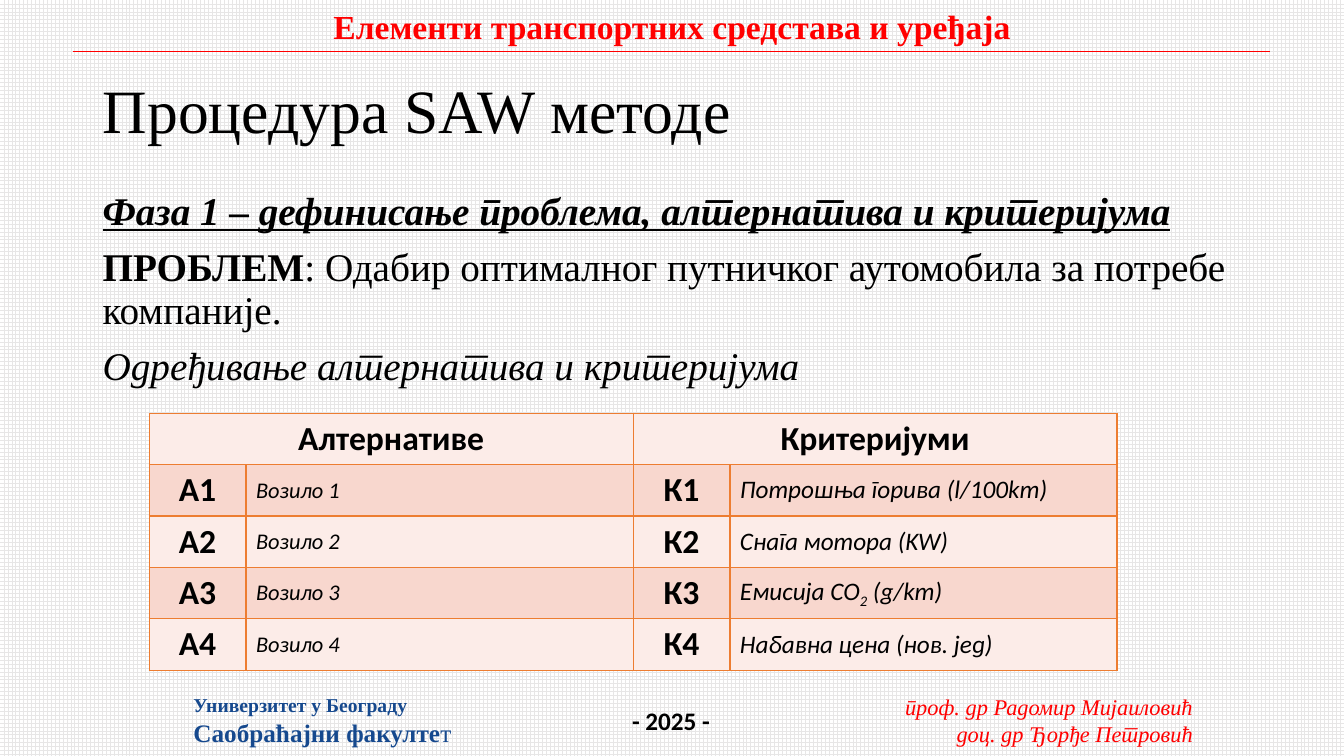
import pptx
import pptx.dml.color
import pptx.enum.dml
import pptx.enum.shapes
import pptx.enum.text
import pptx.oxml
import pptx.oxml.ns
import pptx.util
from dataclasses import dataclass
from lxml import etree

Inches = pptx.util.Inches
Pt = pptx.util.Pt
ALIGN = pptx.enum.text.PP_ALIGN
ANCHOR = pptx.enum.text.MSO_ANCHOR
AUTO = pptx.enum.text.MSO_AUTO_SIZE
qn = pptx.oxml.ns.qn


@dataclass(frozen=True)
class Theme:
    serif: str = "Times New Roman"
    sans: str = "Calibri"
    language: str = "sr-Cyrl-RS"
    black: str = "000000"
    white: str = "FFFFFF"
    red: str = "FF0000"
    navy: str = "16498E"
    grid: str = "E7E6E6"
    border: str = "ED7D31"
    light_row: str = "FCECE8"
    dark_row: str = "F8D7CE"
    title: int = 44
    body: int = 28
    heading: int = 24
    label: int = 18
    note: int = 16
    small: int = 14


def rgb(value):
    return pptx.dml.color.RGBColor.from_string(value)


class Deck:
    def __init__(self, theme):
        self.theme = theme
        self.prs = pptx.Presentation()
        self.prs.slide_width, self.prs.slide_height = Inches(13.33), Inches(7.5)

    def add_slide(self):
        self.s = self.prs.slides.add_slide(self.prs.slide_layouts[5])
        fill = self.s.background.fill
        fill.patterned()
        fill.pattern = pptx.enum.dml.MSO_PATTERN.LARGE_GRID
        fill.fore_color.rgb = rgb(self.theme.grid)
        fill.back_color.rgb = rgb(self.theme.white)

    def add_runs(self, p, runs, font, color, align=ALIGN.LEFT):
        """Fill a paragraph from (text, size, styles) runs; styles holds letters b, i, u, or _ for subscript."""
        p.alignment = align
        for text, size, styles in runs:
            r = p.add_run()
            r.text = text
            r.font.name, r.font.size = font, Pt(size)
            r.font.color.rgb = rgb(color)
            r.font.bold, r.font.italic = "b" in styles, "i" in styles
            r.font.underline = "u" in styles
            rPr = r._r.get_or_add_rPr()
            rPr.set("lang", self.theme.language)
            if "_" in styles:
                rPr.set("baseline", "-25000")

    def title(self, text, box):
        sp = self.s.shapes.title
        sp.left, sp.top, sp.width, sp.height = map(Inches, box)
        tf = sp.text_frame
        tf.auto_size, tf.vertical_anchor = AUTO.NONE, ANCHOR.MIDDLE
        p = tf.paragraphs[0]
        p.line_spacing = 0.9
        self.add_runs(p, [(text, self.theme.title, "")], self.theme.serif, self.theme.black)

    def text(self, box, paragraphs, color, font=None, align=ALIGN.LEFT,
             wrap=False, line_spacing=None, space_before=0):
        tf = self.s.shapes.add_textbox(*map(Inches, box)).text_frame
        tf.word_wrap = wrap
        tf.auto_size = AUTO.NONE if wrap else AUTO.SHAPE_TO_FIT_TEXT
        for i, runs in enumerate(paragraphs):
            p = tf.add_paragraph() if i else tf.paragraphs[0]
            if line_spacing:
                p.line_spacing = line_spacing
            if i and space_before:
                p.space_before = Pt(space_before)
            self.add_runs(p, runs, font or self.theme.serif, color, align)

    def rule(self, x1, x2, y, color, width):
        line = self.s.shapes.add_connector(
            pptx.enum.shapes.MSO_CONNECTOR.STRAIGHT, Inches(x1), Inches(y), Inches(x2), Inches(y))
        line.line.color.rgb, line.line.width = rgb(color), Pt(width)
        etree.SubElement(line._element.spPr, qn("a:effectLst"))

    def border(self, cell):
        tcPr = cell._tc.get_or_add_tcPr()
        for i, side in enumerate(("lnL", "lnR", "lnT", "lnB")):
            ln = etree.Element(qn(f"a:{side}"), w=str(Pt(1)))
            solid = etree.SubElement(ln, qn("a:solidFill"))
            etree.SubElement(solid, qn("a:srgbClr"), val=self.theme.border)
            tcPr.insert(i, ln)

    def table(self, left, top, widths, row_height, headings, rows):
        """Draw a table whose headings each span a code column and a name column."""
        t = self.theme
        table = self.s.shapes.add_table(
            len(rows) + 1, len(widths), Inches(left), Inches(top),
            Inches(sum(widths)), Inches(row_height * (len(rows) + 1))).table
        for column, width in zip(table.columns, widths):
            column.width = Inches(width)
        for i, heading in enumerate(headings):
            cell = table.cell(0, 2 * i)
            cell.merge(table.cell(0, 2 * i + 1))
            self.add_runs(cell.text_frame.paragraphs[0], [(heading, t.heading, "b")],
                          t.sans, t.black, ALIGN.CENTER)
        for r, row in enumerate(rows, 1):
            for c, runs in enumerate(row):
                self.add_runs(table.cell(r, c).text_frame.paragraphs[0], runs, t.sans, t.black,
                              ALIGN.LEFT if c % 2 else ALIGN.CENTER)
        for r, row in enumerate(table.rows):
            row.height = Inches(row_height)
            for cell in row.cells:
                cell.vertical_anchor = ANCHOR.MIDDLE
                cell.fill.solid()
                cell.fill.fore_color.rgb = rgb(t.dark_row if r % 2 else t.light_row)
                self.border(cell)


def main():
    t = Theme()
    deck = Deck(t)
    deck.add_slide()

    deck.text((8.83, 6.83, 3.1, 0.64),
              [[("проф. др Радомир Мијаиловић", t.note, "i")],
               [("доц. др Ђорђе Петровић", t.note, "i")]], t.red, align=ALIGN.RIGHT)
    deck.rule(0.72, 12.6, 0.51, t.red, 0.5)
    deck.text((3.17, 0.01, 6.99, 0.5),
              [[("Елементи транспортних средстава и уређаја", t.heading, "b")]],
              t.red, align=ALIGN.CENTER)
    deck.text((6.17, 6.95, 0.98, 0.4), [[("- 2025 -", t.label, "b")]], t.black, font=t.sans)
    deck.text((1.82, 6.83, 2.79, 0.64),
              [[("Универзитет у Београду", t.small, "b")],
               [("Саобраћајни факулте", t.label, "b"), ("т", t.label, "")]], t.navy)

    deck.title("Процедура SAW методе", (0.92, 0.4, 11.5, 1.45))
    deck.text((0.92, 1.85, 11.5, 4.91),
              [[("Фаза 1 – дефинисање проблема, алтернатива и критеријума", t.body, "biu")],
               [("ПРОБЛЕМ", t.body, "b"),
                (": Одабир оптималног путничког аутомобила за потребе компаније.", t.body, "")],
               [("Одређивање алтернатива и критеријума", t.body, "i")]],
              t.black, wrap=True, line_spacing=0.9, space_before=10)

    criteria = [
        [("Потрошња горива (l/100km)", t.label, "i")],
        [("Снага мотора (KW)", t.label, "i")],
        [("Емисија CO", t.label, "i"), ("2", t.label, "i_"), (" (g/km)", t.label, "i")],
        [("Набавна цена (нов. јед)", t.label, "i")],
    ]
    rows = [[[(f"А{n}", t.heading, "b")], [(f"Возило {n}", t.note, "i")],
             [(f"К{n}", t.heading, "b")], criterion]
            for n, criterion in enumerate(criteria, 1)]
    deck.table(1.48, 4.1, (0.96, 3.84) * 2, 0.51, ("Алтернативе", "Критеријуми"), rows)

    deck.prs.save("out.pptx")


if __name__ == "__main__":
    main()
